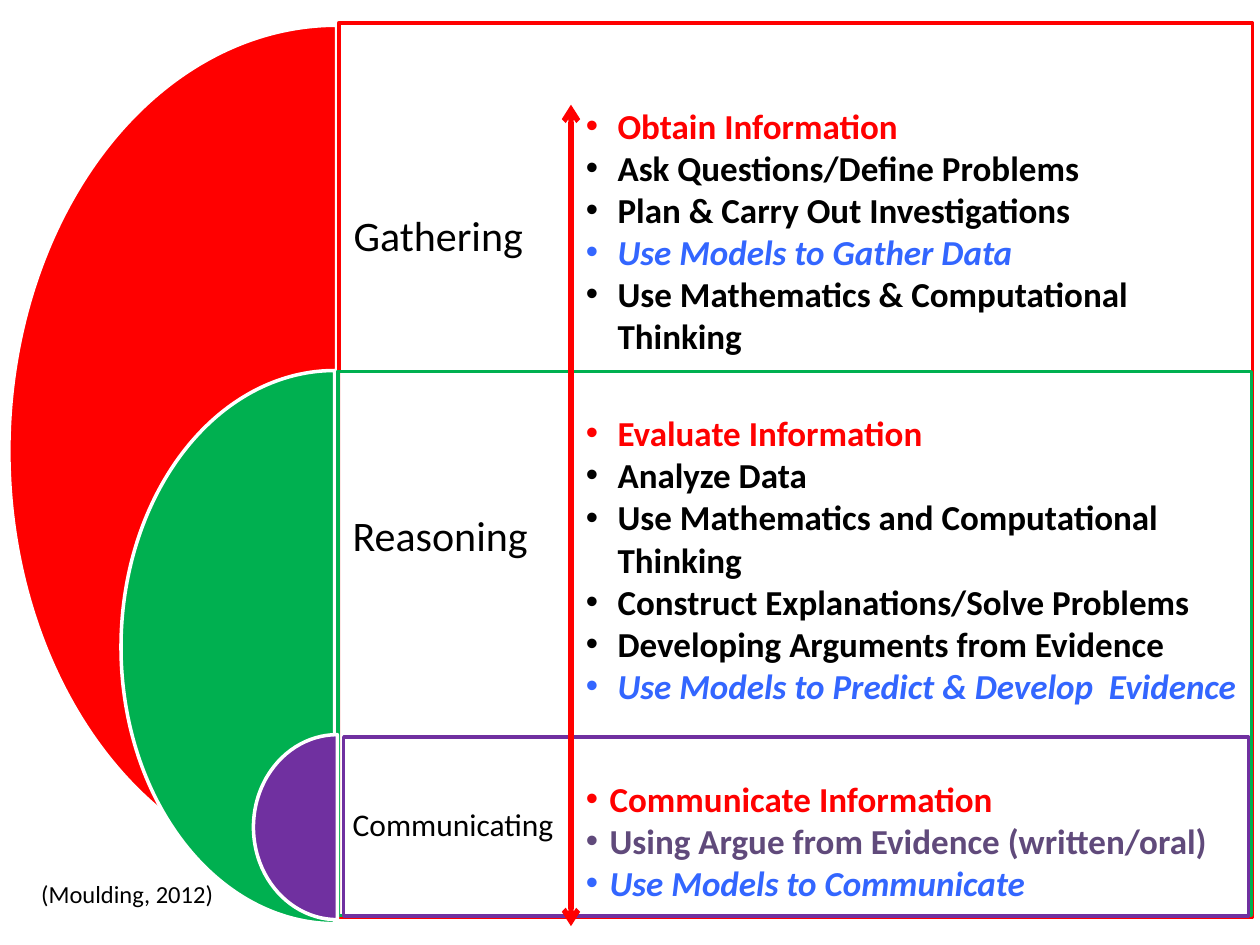
from lxml.etree import SubElement
from pptx import Presentation
from pptx.dml.color import RGBColor
from pptx.enum.shapes import MSO_CONNECTOR, MSO_SHAPE
from pptx.enum.text import MSO_ANCHOR, MSO_AUTO_SIZE
from pptx.oxml.ns import qn
from pptx.util import Cm, Pt

WHITE, BLACK, RED, GREEN = "FFFFFF", "000000", "FF0000", "00B050"
PURPLE, BLUE, MUTED = "7030A0", "3366FF", "604A7B"

BANDS = [
    dict(color=RED, pie=(0.18, 0.51, 13.21, 17.17), panel=(6.83, 0.46, 18.42, 18.03),
         label="Gathering", label_height=5.41, label_top=3.58, inset=0.3, size=24),
    dict(color=GREEN, pie=(2.44, 7.47, 8.61, 11.15), panel=(6.81, 7.49, 18.42, 10.97),
         label="Reasoning", label_height=5.05, label_top=1.96, inset=0.3, size=24),
    dict(color=PURPLE, pie=(5.11, 14.81, 3.38, 3.73), panel=(6.93, 14.86, 18.24, 3.61),
         label="Communicating", label_height=3.61, label_top=0.18, inset=0.18, size=18),
]

PRACTICES = [
    dict(place=(11.56, 1.98, 11.94, 5.38), indent=0.64, wrap=True, items=[
        ("Obtain Information", RED),
        ("Ask Questions/Define Problems", BLACK),
        ("Plan & Carry Out Investigations", BLACK),
        ("Use Models to Gather Data", BLUE),
        ("Use Mathematics & Computational Thinking", BLACK),
    ]),
    dict(place=(11.56, 8.18, 14.07, 6.25), indent=0.64, wrap=True, items=[
        ("Evaluate Information", RED),
        ("Analyze Data", BLACK),
        ("Use Mathematics and Computational Thinking", BLACK),
        ("Construct Explanations/Solve Problems", BLACK),
        ("Developing Arguments from Evidence", BLACK),
        ("Use Models to Predict & Develop  Evidence", BLUE),
    ]),
    dict(place=(11.56, 15.54, 13.36, 2.82), indent=0.48, wrap=False, items=[
        ("Communicate Information", RED),
        ("Using Argue from Evidence (written/oral)", MUTED),
        ("Use Models to Communicate", BLUE),
    ]),
]


def rgb(color):
    return RGBColor.from_string(color)


def lengths(place):
    return [Cm(value) for value in place]


def apply(target, values):
    for name, value in values.items():
        setattr(target, name, value)


def add_span(para, text, color, size, **style):
    span = para.add_run()
    span.text = text
    span.font.color.rgb = rgb(color)
    apply(span.font, dict(name="Calibri", size=Pt(size), **style))


def add_box(page, place, **frame_values):
    box = page.shapes.add_textbox(*lengths(place))
    apply(box.text_frame, frame_values)
    return box.text_frame


def add_form(page, kind, place, fill, line):
    form = page.shapes.add_shape(kind, *lengths(place))
    form.shadow.inherit = False
    form.fill.solid()
    form.fill.fore_color.rgb = rgb(fill)
    form.line.color.rgb = rgb(line)
    form.line.width = Pt(2)
    return form


def add_half_disc(page, place, color):
    disc = add_form(page, MSO_SHAPE.PIE, place, color, WHITE)
    disc.adjustments[0] = 54
    disc.adjustments[1] = 162


def add_panel(page, place, color):
    panel = add_form(page, MSO_SHAPE.RECTANGLE, place, WHITE, color)
    tint = panel.fill._xPr.find(qn("a:solidFill"))[0]
    SubElement(tint, qn("a:alpha"), val="90000")


def add_label(page, band):
    inset = Cm(band["inset"])
    frame = add_box(page, (*band["panel"][:3], band["label_height"]),
                    word_wrap=True, vertical_anchor=MSO_ANCHOR.MIDDLE,
                    margin_left=inset, margin_right=inset,
                    margin_top=Cm(band["label_top"]), margin_bottom=inset)
    para = frame.paragraphs[0]
    para.line_spacing = 0.9
    add_span(para, band["label"], BLACK, band["size"])


def add_band(page, band):
    add_half_disc(page, band["pie"], band["color"])
    add_panel(page, band["panel"], band["color"])
    add_label(page, band)


def add_bullets(page, place, indent, wrap, items):
    frame = add_box(page, place, word_wrap=wrap, auto_size=MSO_AUTO_SIZE.SHAPE_TO_FIT_TEXT)
    for index, (text, color) in enumerate(items):
        para = frame.add_paragraph() if index else frame.paragraphs[0]
        settings = para._p.get_or_add_pPr()
        settings.set("marL", str(Cm(indent)))
        settings.set("indent", str(-Cm(indent)))
        SubElement(settings, qn("a:buFont"), typeface="Arial")
        SubElement(settings, qn("a:buChar"), char="•")
        add_span(para, text, color, 20, bold=True, italic=color == BLUE)


def add_double_arrow(page, start, end, color):
    arrow = page.shapes.add_connector(MSO_CONNECTOR.STRAIGHT, *lengths(start + end))
    arrow.line.color.rgb = rgb(color)
    arrow.line.width = Pt(3)
    for tip in ("a:headEnd", "a:tailEnd"):
        SubElement(arrow.line._get_or_add_ln(), qn(tip), type="arrow")
    SubElement(arrow._element.spPr, qn("a:effectLst"))


def add_citation(page, place, text):
    frame = add_box(page, place, word_wrap=False, auto_size=MSO_AUTO_SIZE.SHAPE_TO_FIT_TEXT)
    add_span(frame.paragraphs[0], text, BLACK, 14)


def main():
    deck = Presentation()
    apply(deck, dict(slide_width=Cm(25.4), slide_height=Cm(19.05)))
    page = deck.slides.add_slide(deck.slide_layouts[6])
    for band in BANDS:
        add_band(page, band)
    for practice in PRACTICES:
        add_bullets(page, **practice)
    add_double_arrow(page, (11.51, 2.11), (11.51, 18.67), RED)
    add_citation(page, (0.58, 17.6, 3.99, 0.86), "(Moulding, 2012)")
    deck.save("out.pptx")


if __name__ == "__main__":
    main()
